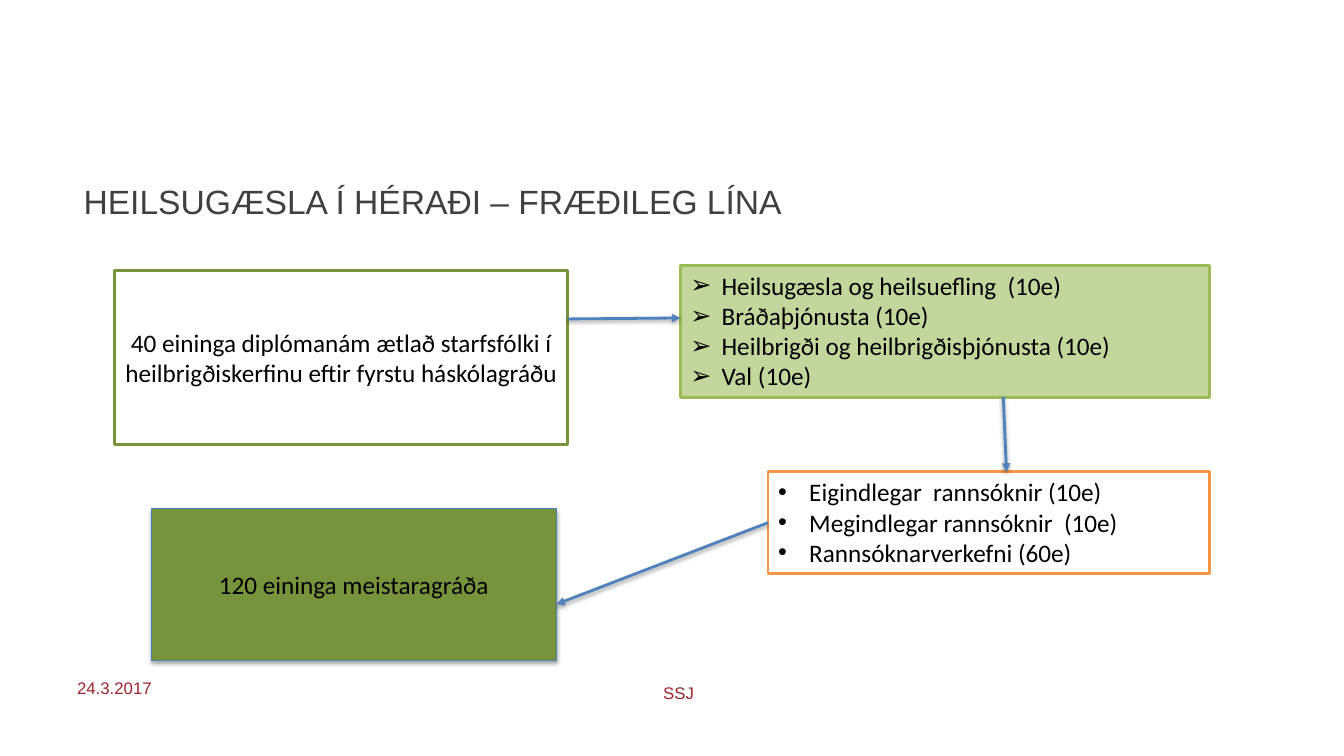
from lxml.etree import SubElement
from pptx import Presentation
from pptx.dml.color import RGBColor
from pptx.enum.shapes import MSO_CONNECTOR, MSO_SHAPE
from pptx.enum.text import MSO_ANCHOR, MSO_AUTO_SIZE, PP_ALIGN
from pptx.oxml.ns import qn
from pptx.util import Inches, Pt

COLORS = {
    "title": "404040", "footer": "9B262D", "text": "000000", "white": "FFFFFF",
    "light": "C3D69B", "green": "9BBB59", "dark": "77933C",
    "orange": "F79646", "edge": "4B7EBC", "arrow": "4F81BD",
}
SLIDE_W, SLIDE_H = Inches(13.333), Inches(7.5)

# Boxes as left, top, width, height in percent of the slide
TITLE = (5.48, 18.27, 90, 16.67)
FOOTER = (19.28, 88.93, 62.42, 5.33)
DATE = (5, 88.93, 12.5, 5.33)
COURSES = (50.63, 35.07, 39.38, 17.47)
DIPLOMA = (8.55, 35.73, 33.68, 23.07)
MASTER = (11.25, 67.33, 30.15, 20)
RESEARCH = (57.15, 62.4, 32.85, 13.47)


def rgb(name):
    return RGBColor.from_string(COLORS[name])


def place(box, fx=0, fy=0):
    """Point at the shares fx, fy of a box."""
    x, y, w, h = box
    return (round((x + fx * w) * SLIDE_W / 100),
            round((y + fy * h) * SLIDE_H / 100))


def size(box):
    return round(box[2] * SLIDE_W / 100), round(box[3] * SLIDE_H / 100)


def add_bullet(p, char):
    pPr = p._p.get_or_add_pPr()
    pPr.set("marL", str(Inches(0.31)))
    pPr.set("indent", str(-Inches(0.31)))
    SubElement(pPr, qn("a:buFont"), typeface="Arial")
    SubElement(pPr, qn("a:buChar"), char=char)


def write(tf, lines, font="Calibri", pt=18, color="text", align=PP_ALIGN.LEFT,
          anchor=MSO_ANCHOR.MIDDLE, bullet=None):
    tf.word_wrap = True
    tf.vertical_anchor = anchor
    for i, line in enumerate(lines):
        p = tf.paragraphs[0] if i == 0 else tf.add_paragraph()
        p.alignment = align
        if bullet:
            add_bullet(p, bullet)
        r = p.add_run()
        r.text = line
        r.font.name, r.font.size = font, Pt(pt)
        r.font.color.rgb = rgb(color)


def add_shadow(spPr, alpha, dist):
    effects = spPr.find(qn("a:effectLst"))
    if effects is None:
        effects = SubElement(spPr, qn("a:effectLst"))
    shadow = SubElement(effects, qn("a:outerShdw"), blurRad=str(Pt(3.1)),
                        dist=str(Pt(dist)), dir="5400000", rotWithShape="0")
    clr = SubElement(shadow, qn("a:srgbClr"), val=COLORS["text"])
    SubElement(clr, qn("a:alpha"), val=str(alpha * 1000))


def add_label(s, box, text, **fmt):
    tb = s.shapes.add_textbox(*place(box), *size(box))
    write(tb.text_frame, [text], font="Arial", **fmt)


def add_card(s, box, lines, fill, line, weight=2, **fmt):
    sp = s.shapes.add_shape(MSO_SHAPE.RECTANGLE, *place(box), *size(box))
    sp.fill.solid()
    sp.fill.fore_color.rgb = rgb(fill)
    sp.line.color.rgb = rgb(line)
    sp.line.width = Pt(weight)
    sp.shadow.inherit = False
    write(sp.text_frame, lines, **fmt)
    return sp


def add_list(s, box, lines, fill, line, bullet):
    sp = add_card(s, box, lines, fill, line, bullet=bullet, anchor=MSO_ANCHOR.TOP)
    sp.text_frame.auto_size = MSO_AUTO_SIZE.SHAPE_TO_FIT_TEXT


def add_arrow(s, start, end):
    cx = s.shapes.add_connector(MSO_CONNECTOR.STRAIGHT, *start, *end)
    cx.line.color.rgb = rgb("arrow")
    cx.line.width = Pt(2)
    SubElement(cx.line._get_or_add_ln(), qn("a:tailEnd"), type="triangle")
    add_shadow(cx._element.spPr, 38, 1.6)


def add_labels(s):
    add_label(s, TITLE, "HEILSUGÆSLA Í HÉRAÐI – FRÆÐILEG LÍNA", pt=24, color="title")
    add_label(s, FOOTER, "SSJ", pt=12, color="footer", align=PP_ALIGN.CENTER)
    add_label(s, DATE, "24.3.2017", pt=12, color="footer", anchor=MSO_ANCHOR.TOP)


def add_flow(s):
    # Steps of the study path
    add_list(s, COURSES, [
        "Heilsugæsla og heilsuefling  (10e)",
        "Bráðaþjónusta (10e)",
        "Heilbrigði og heilbrigðisþjónusta (10e)",
        "Val (10e)",
    ], "light", "green", "➢")
    add_card(s, DIPLOMA, ["40 eininga diplómanám ætlað starfsfólki í "
                          "heilbrigðiskerfinu eftir fyrstu háskólagráðu"],
             "white", "dark", align=PP_ALIGN.CENTER)
    master = add_card(s, MASTER, ["120 eininga meistaragráða"], "dark", "edge",
                      weight=0.75, align=PP_ALIGN.CENTER)
    add_shadow(master._element.spPr, 35, 1.8)
    add_list(s, RESEARCH, [
        "Eigindlegar  rannsóknir (10e)",
        "Megindlegar rannsóknir  (10e)",
        "Rannsóknarverkefni (60e)",
    ], "white", "orange", "•")

    # Arrows between the steps
    add_arrow(s, place(DIPLOMA, 1, 0.28), place(COURSES, 0, 0.4))
    add_arrow(s, place(COURSES, 0.61, 1), place(RESEARCH, 0.54, 0))
    add_arrow(s, place(RESEARCH, 0, 0.5), place(MASTER, 1, 0.63))


def main():
    prs = Presentation()
    prs.slide_width, prs.slide_height = SLIDE_W, SLIDE_H
    s = prs.slides.add_slide(prs.slide_layouts[6])
    add_labels(s)
    add_flow(s)
    prs.save("out.pptx")


if __name__ == "__main__":
    main()
